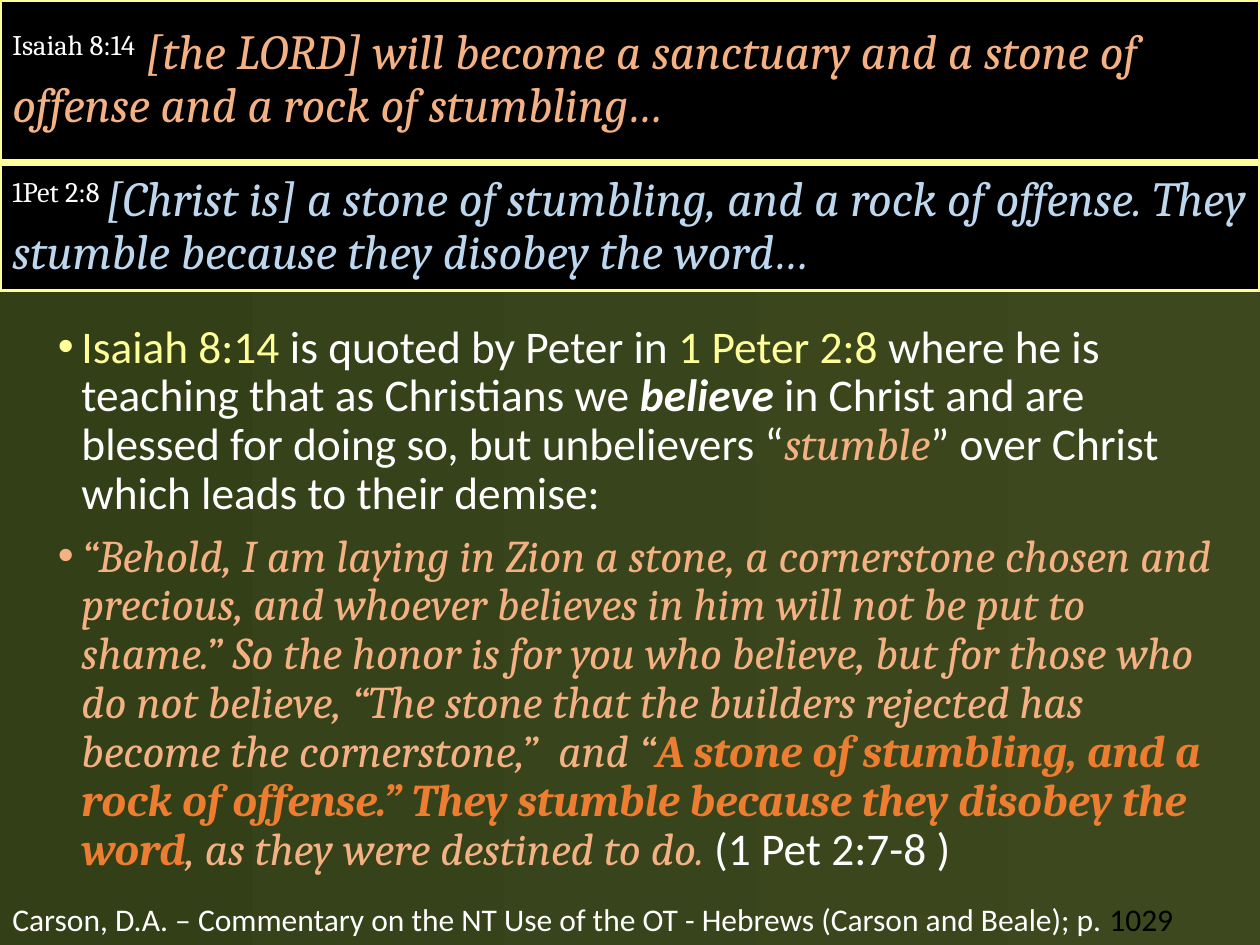
from pptx import Presentation
from pptx.dml.color import RGBColor
from pptx.enum.shapes import MSO_SHAPE as Shape
from pptx.enum.text import MSO_ANCHOR as Anchor, MSO_AUTO_SIZE as AutoSize, PP_ALIGN as Align
from pptx.oxml.ns import qn
from pptx.util import Pt
from lxml.etree import SubElement

COLORS = {
    "white": "FFFFFF", "black": "000000", "yellow": "FFFF99", "peach": "F4B183",
    "orange": "ED7D31", "blue": "BDD7EE", "moss": "3D481F", "forest": "334017",
}
SANS, SERIF = "Calibri", "Cambria"


def color(name):
    return RGBColor.from_string(COLORS[name])


class SlideBuilder:
    """Holds the text style and the slide being filled."""
    line_spacing = 0.9
    space_before = Pt(7.5)
    bullet_indent = Pt(13.5)
    border = Pt(2)

    def __init__(self, slide):
        self.slide = slide

    def background(self, *names):
        fill = self.slide.background.fill
        fill.gradient()
        fill.gradient_angle = 180
        for stop, position, name in zip(fill.gradient_stops, (0, 1), names):
            stop.position = position
            stop.color.rgb = color(name)

    def add_run(self, para, text, size, tint="white", font=SANS,
                bold=False, italic=False, raised=False):
        span = para.add_run()
        span.text = text
        span.font.size = Pt(size)
        span.font.name = font
        span.font.bold = bold
        span.font.italic = italic
        span.font.color.rgb = color(tint)
        if raised:
            span.font._element.set("baseline", "30000")

    def set_spacing(self, para):
        para.alignment = Align.LEFT
        para.line_spacing = self.line_spacing
        para.space_before = self.space_before

    def verse_banner(self, top, height, reference, verse, tint):
        box = self.slide.shapes.add_shape(Shape.RECTANGLE, 0, Pt(top), Pt(720), Pt(height))
        box.shadow.inherit = False
        box.fill.solid()
        box.fill.fore_color.rgb = color("black")
        box.line.color.rgb = color("yellow")
        box.line.width = self.border
        frame = box.text_frame
        frame.word_wrap = True
        frame.vertical_anchor = Anchor.MIDDLE
        para = frame.paragraphs[0]
        self.set_spacing(para)
        self.add_run(para, reference, 28, font=SERIF, raised=True)
        self.add_run(para, verse, 28, tint, SERIF, italic=True)

    def text_box(self, left, top, width, height):
        box = self.slide.shapes.add_textbox(Pt(left), Pt(top), Pt(width), Pt(height))
        box.text_frame.word_wrap = True
        return box.text_frame

    def bullet_list(self, left, top, width, height, size, items):
        frame = self.text_box(left, top, width, height)
        for index, spans in enumerate(items):
            para = frame.add_paragraph() if index else frame.paragraphs[0]
            self.set_spacing(para)
            properties = para._p.get_or_add_pPr()
            properties.set("marL", str(self.bullet_indent))
            properties.set("indent", str(-self.bullet_indent))
            SubElement(properties, qn("a:buFont"), typeface="Arial")
            SubElement(properties, qn("a:buChar"), char="•")
            for text, style in spans:
                self.add_run(para, text, size, **style)

    def source_note(self, left, top, width, height, spans):
        frame = self.text_box(left, top, width, height)
        frame.auto_size = AutoSize.SHAPE_TO_FIT_TEXT
        for text, tint in spans:
            self.add_run(frame.paragraphs[0], text, 18, tint)


PLAIN = {}
REFERENCE = {"tint": "yellow"}
STRONG = {"bold": True, "italic": True}
QUOTE = {"tint": "peach", "font": SERIF, "italic": True}
KEY_QUOTE = {**QUOTE, "tint": "orange", "bold": True}

COMMENTARY = [
    [
        ("Isaiah 8:14 ", REFERENCE),
        ("is quoted by Peter in ", PLAIN),
        ("1 Peter 2:8 ", REFERENCE),
        ("where he is teaching that as Christians we ", PLAIN),
        ("believe", STRONG),
        (" in Christ and are blessed for doing so, but unbelievers “", PLAIN),
        ("stumble", QUOTE),
        ("” over Christ which leads to their demise:", PLAIN),
    ],
    [
        ("“Behold, I am laying in Zion a stone, a cornerstone chosen and precious, "
         "and whoever believes in him will not be put to shame.” So the honor is for "
         "you who believe, but for those who do not believe, “The stone that the "
         "builders rejected has become the cornerstone,”  and “", QUOTE),
        ("A stone of stumbling, and a rock of offense.” They stumble because they "
         "disobey the word", KEY_QUOTE),
        (", as they were destined to do. ", QUOTE),
        ("(1 Pet 2:7-8 )", PLAIN),
    ],
]


def main():
    deck = Presentation()
    deck.slide_width, deck.slide_height = Pt(720), Pt(540)
    page = SlideBuilder(deck.slides.add_slide(deck.slide_layouts[6]))
    page.background("moss", "forest")
    page.verse_banner(
        0, 92, "Isaiah 8:14",
        " [the LORD] will become a sanctuary and a stone of offense and a rock of stumbling…",
        "peach")
    page.bullet_list(26, 181.5, 676, 326, 25.9, COMMENTARY)
    page.source_note(0, 511, 720, 29, [
        ("Carson, D.A. – Commentary on the NT Use of the OT - Hebrews "
         "(Carson and Beale); p. ", "white"),
        ("1029", "black"),
    ])
    page.verse_banner(
        94, 72, "1Pet 2:8 ",
        "[Christ is] a stone of stumbling, and a rock of offense. "
        "They stumble because they disobey the word…",
        "blue")
    deck.save("out.pptx")


if __name__ == "__main__":
    main()
